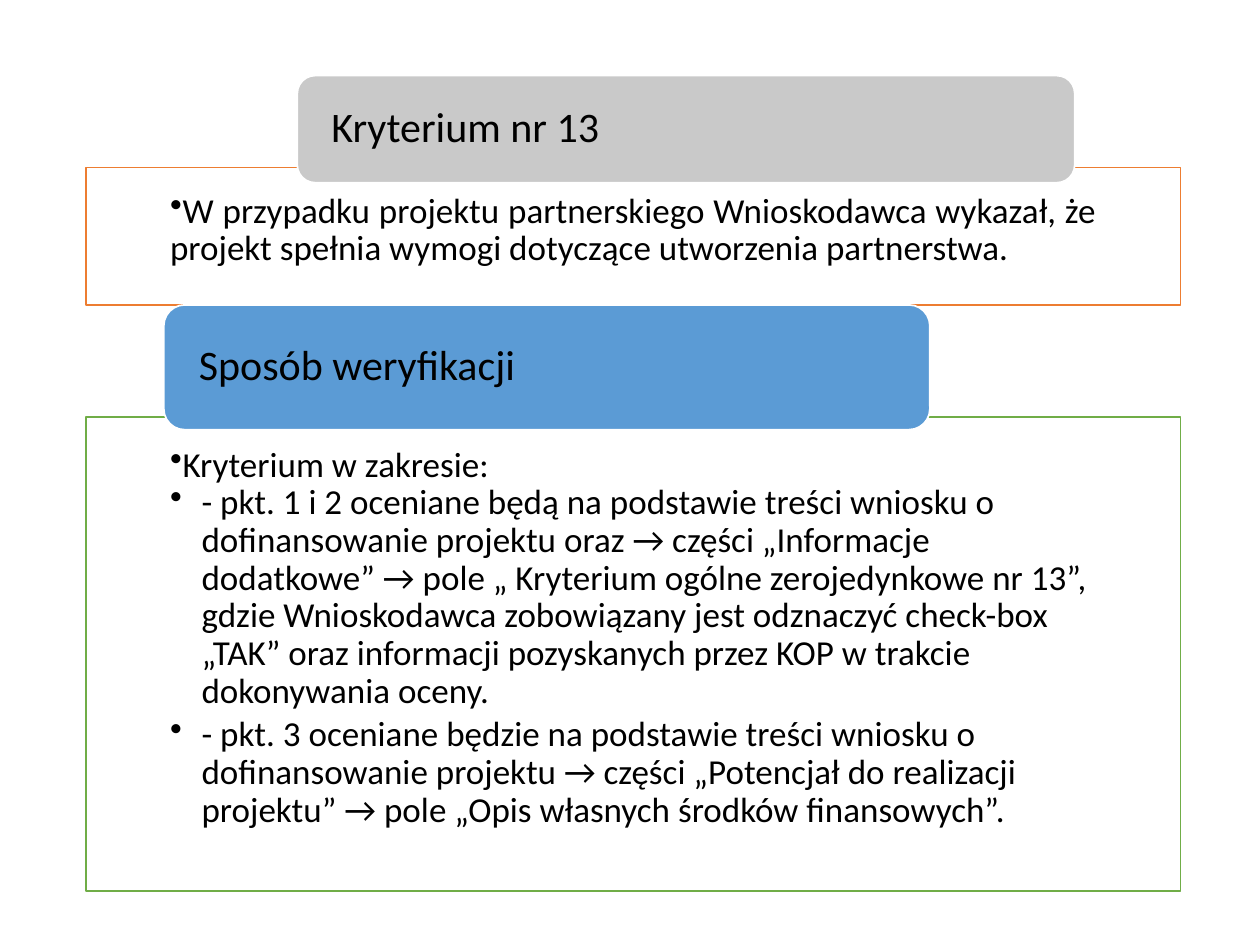
from lxml import etree
from pptx import Presentation
from pptx.dml.color import RGBColor
from pptx.enum.shapes import MSO_SHAPE as Shape
from pptx.enum.text import MSO_ANCHOR as Anchor, PP_ALIGN as Align
from pptx.oxml.ns import qn
from pptx.util import Inches, Pt

COLORS = {"white": "FFFFFF", "black": "000000", "orange": "ED7D31",
          "green": "70AD47", "gray": "C9C9C9", "blue": "5B9BD5"}
FONT = "Calibri"
FRAME_LEFT, FRAME_WIDTH = 0.68, 8.69
HANGING = 0.25

LEAD = {"align": Align.JUSTIFY, "bullet": True}
ITEM = {"bullet": True, "level": 1, "hanging": HANGING, "line": 0.9, "after": 3}

SECTIONS = [
    {
        "heading": "Kryterium nr 13", "heading_shape": Shape.ROUNDED_RECTANGLE,
        "heading_box": (2.36, 0.6, 6.17, 0.85), "heading_fill": "gray",
        "frame_top": 1.33, "frame_height": 1.09, "frame_line": "orange",
        "body": [
            ("W przypadku projektu partnerskiego Wnioskodawca wykazał, że projekt "
             "spełnia wymogi dotyczące utworzenia partnerstwa.",
             {**ITEM, "hanging": 0, "align": Align.JUSTIFY}),
        ],
    },
    {
        "heading": "Sposób weryfikacji",
        "heading_shape": Shape.FLOWCHART_ALTERNATE_PROCESS,
        "heading_box": (1.3, 2.42, 6.08, 0.99), "heading_fill": "blue",
        "frame_top": 3.31, "frame_height": 3.76, "frame_line": "green",
        "body": [
            ("Kryterium w zakresie:", LEAD),
            ("- pkt. 1 i 2 oceniane będą na podstawie treści wniosku o "
             "dofinansowanie projektu oraz → części „Informacje dodatkowe” → pole "
             "„ Kryterium ogólne zerojedynkowe nr 13”, gdzie Wnioskodawca "
             "zobowiązany jest odznaczyć check-box „TAK” oraz informacji "
             "pozyskanych przez KOP w trakcie dokonywania oceny.", ITEM),
            ("- pkt. 3 oceniane będzie na podstawie treści wniosku o "
             "dofinansowanie projektu → części „Potencjał do realizacji projektu” "
             "→ pole „Opis własnych środków finansowych”.", ITEM),
        ],
    },
]


def color(name):
    return RGBColor.from_string(COLORS[name])


def add_panel(slide, preset, box, fill, line, margins, anchor):
    """Add a filled, outlined shape and return its text frame."""
    panel = slide.shapes.add_shape(preset, *map(Inches, box))
    panel.shadow.inherit = False
    panel.fill.solid()
    panel.fill.fore_color.rgb = color(fill)
    panel.line.color.rgb = color(line)
    panel.line.width = Pt(1)
    frame = panel.text_frame
    frame.word_wrap = True
    frame.vertical_anchor = anchor
    (frame.margin_left, frame.margin_top,
     frame.margin_right, frame.margin_bottom) = map(Inches, margins)
    return frame


def write(paragraph, text, size=20, align=Align.LEFT, bullet=False, level=0,
          hanging=0, line=None, after=0):
    if bullet:
        props = paragraph._p.get_or_add_pPr()
        props.set("marL", str(Inches(hanging)))
        props.set("indent", str(-Inches(hanging)))
        etree.SubElement(props, qn("a:buChar")).set("char", "•")
    paragraph.text = text
    paragraph.level = level
    paragraph.alignment = align
    paragraph.space_after = Pt(after)
    if line:
        paragraph.line_spacing = line
    paragraph.font.name = FONT
    paragraph.font.size = Pt(size)
    paragraph.font.color.rgb = color("black")


def add_section(slide, section):
    frame_box = (FRAME_LEFT, section["frame_top"], FRAME_WIDTH, section["frame_height"])
    body = add_panel(slide, Shape.RECTANGLE, frame_box, "white", section["frame_line"],
                     (0.67, 0.2, 0.67, 0.16), Anchor.TOP)
    for index, (text, style) in enumerate(section["body"]):
        write(body.add_paragraph() if index else body.paragraphs[0], text, **style)

    heading = add_panel(slide, section["heading_shape"], section["heading_box"],
                        section["heading_fill"], "white", (0.23, 0, 0.23, 0), Anchor.MIDDLE)
    write(heading.paragraphs[0], section["heading"], size=24, line=0.9)


def main():
    deck = Presentation()
    deck.slide_width, deck.slide_height = Inches(10), Inches(7.5)
    slide = deck.slides.add_slide(deck.slide_layouts[6])
    for section in SECTIONS:
        add_section(slide, section)
    deck.save("out.pptx")


if __name__ == "__main__":
    main()
